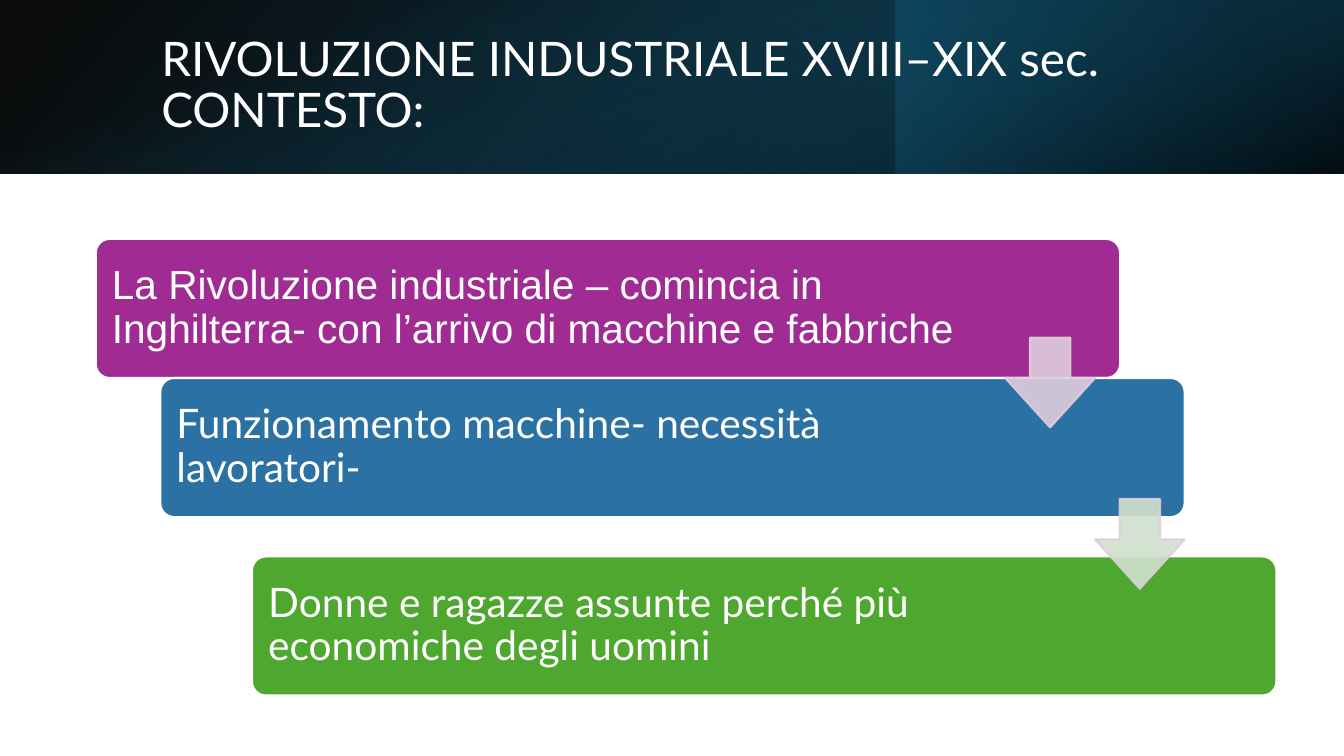
"""Build the slide on the context of the Industrial Revolution."""
import pptx
import pptx.dml.color
import pptx.enum.shapes
import pptx.enum.text
import pptx.oxml
import pptx.oxml.ns
import pptx.util

Inches = pptx.util.Inches
SHAPES = pptx.enum.shapes.MSO_SHAPE

TITLE = "RIVOLUZIONE INDUSTRIALE XVIII–XIX sec. CONTESTO:"
STEPS = [
    {"text": "La Rivoluzione industriale – comincia in Inghilterra- con l’arrivo di macchine e fabbriche",
     "left": 0.95, "top": 2.37, "text_width": 8.67, "font": "Arial", "color": "A02B93"},
    {"text": "Funzionamento macchine- necessità lavoratori-",
     "left": 1.59, "top": 3.75, "text_width": 8.29, "font": "Lato", "color": "2C71A4"},
    {"text": "Donne e ragazze assunte perché più economiche degli uomini",
     "left": 2.5, "top": 5.52, "text_width": 8.29, "font": "Lato", "color": "4EA72E"},
]
ARROWS = [(9.97, 3.35, "DFCDDC"), (10.86, 4.95, "D0E1CD")]
ARROW_LINE = "DFCDDC"
SLIDE_WIDTH, SLIDE_HEIGHT, BAND_HEIGHT = 13.33, 7.5, 1.72
STEP_WIDTH, STEP_HEIGHT, STEP_MARGIN, ARROW_SIZE = 10.16, 1.38, 0.04, 0.89
BAND_MIDDLE = (SLIDE_WIDTH - BAND_HEIGHT) / 2
BANDS = [
    {"box": (0, 0, SLIDE_WIDTH, BAND_HEIGHT), "rotation": 0, "flip": True, "angle": 140,
     "stops": [(0, "000000", 96), (1, "104862", 100)]},
    {"box": (SLIDE_WIDTH * 2 / 3, 0, SLIDE_WIDTH / 3, BAND_HEIGHT), "rotation": 180, "flip": False,
     "angle": 320, "stops": [(0.19, "0B3041", 68), (1, "156082", 79)]},
    {"box": (BAND_MIDDLE, -BAND_MIDDLE, BAND_HEIGHT, SLIDE_WIDTH), "rotation": 90, "flip": False,
     "angle": 340, "stops": [(0.23, "156082", 0), (0.99, "000000", 74)]},
]


def rgb(value):
    return pptx.dml.color.RGBColor.from_string(value)


def place(shape, left, top, width, height):
    shape.left, shape.top = Inches(left), Inches(top)
    shape.width, shape.height = Inches(width), Inches(height)


def set_opacity(shape, percentages):
    colors = shape.element.spPr.iter(pptx.oxml.ns.qn("a:srgbClr"))
    for color, percentage in zip(colors, percentages):
        alpha = pptx.oxml.parse_xml(f'<a:alpha {pptx.oxml.ns.nsdecls("a")} val="{percentage * 1000}"/>')
        color.append(alpha)


def add_shape(slide, kind, box, fill=None, line=None, adjustments=()):
    shape = slide.shapes.add_shape(kind, *map(Inches, box))
    shape.shadow.inherit = False
    for index, value in enumerate(adjustments):
        shape.adjustments[index] = value
    if fill:
        shape.fill.solid()
        shape.fill.fore_color.rgb = rgb(fill)
    if line:
        shape.line.color.rgb = rgb(line)
        shape.line.width = pptx.util.Pt(1.5)
    else:
        shape.line.fill.background()
    return shape


def write(shape, text, size, font, color="FFFFFF", inset=None):
    frame = shape.text_frame
    frame.word_wrap = True
    frame.auto_size = pptx.enum.text.MSO_AUTO_SIZE.NONE
    frame.vertical_anchor = pptx.enum.text.MSO_ANCHOR.MIDDLE
    if inset is not None:
        frame.margin_left = frame.margin_right = Inches(inset)
        frame.margin_top = frame.margin_bottom = Inches(inset)
    paragraph = frame.paragraphs[0]
    paragraph.alignment = pptx.enum.text.PP_ALIGN.LEFT
    paragraph.line_spacing = 0.9
    run = paragraph.add_run()
    run.text = text
    run.font.size = pptx.util.Pt(size)
    run.font.name = font
    run.font.color.rgb = rgb(color)


def add_band(slide, band):
    shape = add_shape(slide, SHAPES.RECTANGLE, band["box"])
    shape.rotation = band["rotation"]
    if band["flip"]:
        shape.element.spPr.xfrm.set("flipH", "1")
    shape.fill.gradient()
    shape.fill.gradient_angle = 360 - band["angle"]
    for stop, (position, color, _) in zip(shape.fill.gradient_stops, band["stops"]):
        stop.position = position
        stop.color.rgb = rgb(color)
    set_opacity(shape, [opacity for _, _, opacity in band["stops"]])


def add_step(slide, step):
    left, top = step["left"], step["top"]
    add_shape(slide, SHAPES.ROUNDED_RECTANGLE, (left, top, STEP_WIDTH, STEP_HEIGHT),
              step["color"], "FFFFFF", [0.1])
    text_box = slide.shapes.add_textbox(
        Inches(left + STEP_MARGIN), Inches(top + STEP_MARGIN),
        Inches(step["text_width"]), Inches(STEP_HEIGHT - 2 * STEP_MARGIN))
    write(text_box, step["text"], 29, step["font"], inset=0.12)


def main():
    presentation = pptx.Presentation()
    presentation.slide_width = Inches(SLIDE_WIDTH)
    presentation.slide_height = Inches(SLIDE_HEIGHT)
    slide = presentation.slides.add_slide(presentation.slide_layouts[5])
    for band in BANDS:
        add_band(slide, band)
    title = slide.shapes.title
    title.element.getparent().append(title.element)
    place(title, 1.5, 0.38, 10.98, 0.96)
    write(title, TITLE, 34, "Lato")
    for step in STEPS:
        add_step(slide, step)
    for left, top, color in ARROWS:
        arrow = add_shape(slide, SHAPES.DOWN_ARROW, (left, top, ARROW_SIZE, ARROW_SIZE),
                          color, ARROW_LINE, [0.45, 0.55])
        set_opacity(arrow, [90, 90])
    presentation.save("out.pptx")


if __name__ == "__main__":
    main()
